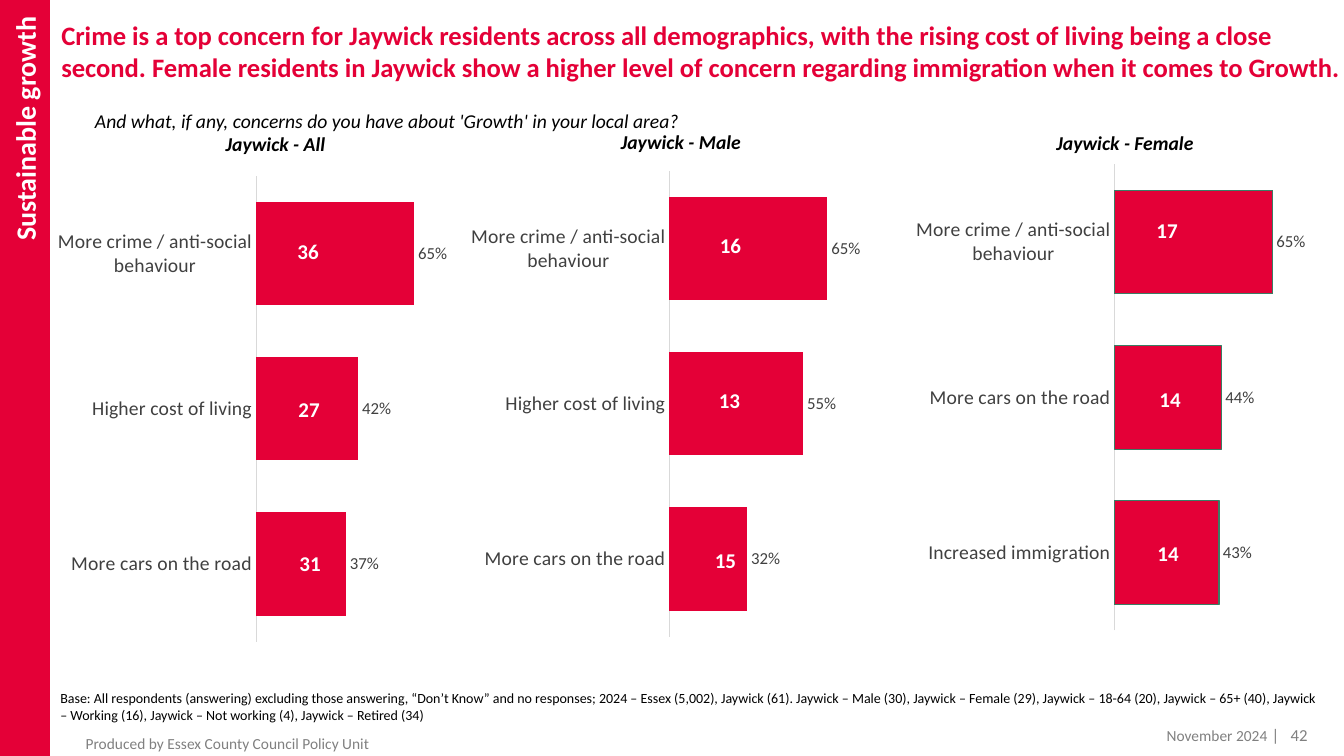
from lxml import etree
from pptx import Presentation
from pptx.chart.data import CategoryChartData
from pptx.dml.color import RGBColor
from pptx.enum.chart import XL_CHART_TYPE as ChartType, XL_LABEL_POSITION as LabelPos, XL_TICK_MARK as Tick
from pptx.enum.shapes import MSO_SHAPE as Preset
from pptx.enum.text import MSO_ANCHOR as Anchor, PP_ALIGN as Align
from pptx.oxml.ns import qn
from pptx.util import Inches, Pt

# Content
HEADLINE = ("Crime is a top concern for Jaywick residents across all demographics, with the rising cost "
            "of living being a close second. Female residents in Jaywick show a higher level of concern "
            "regarding immigration when it comes to Growth.")
SECTION = "Sustainable growth "
QUESTION = " And what, if any, concerns do you have about 'Growth' in your local area?"
BASE = ("Base: All respondents (answering) excluding those answering, “Don’t Know” and no responses; "
        "2024 – Essex (5,002), Jaywick (61). Jaywick – Male (30), Jaywick – Female (29), "
        "Jaywick – 18-64 (20), Jaywick – 65+ (40), Jaywick – Working (16), "
        "Jaywick – Not working (4), Jaywick – Retired (34)")
PRODUCER = "Produced by Essex County Council Policy Unit"
DATE = "November 2024"
PAGE = "42"

CRIME, COST = "More crime / anti-social behaviour", "Higher cost of living"
CARS, IMMIGRATION = "More cars on the road", "Increased immigration"

# Each concern: label, share, number of respondents, place of that number
GROUPS = [
    dict(heading="Jaywick - All", heading_at=(2.14, 1.26, 1.37, 0.34),
         chart_at=(0.21, 1.48), plot_at=(0.547, 0.054), outline=None,
         concerns=[(CRIME, 0.65, "36", (2.95, 2.37)),
                   (COST, 0.42, "27", (2.96, 3.93)),
                   (CARS, 0.37, "31", (2.97, 5.46))]),
    dict(heading="Jaywick - Male", heading_at=(6.06, 1.24, 2.24, 0.34),
         chart_at=(4.31, 1.43), plot_at=(0.547, 0.054), outline=None,
         concerns=[(CRIME, 0.65, "16", (7.14, 2.31)),
                   (COST, 0.55, "13", (7.13, 3.84)),
                   (CARS, 0.32, "15", (7.09, 5.43))]),
    dict(heading="Jaywick - Female", heading_at=(10.38, 1.25, 2.24, 0.34),
         chart_at=(8.86, 1.62), plot_at=(0.515, 0.002), outline="3A7D64",
         concerns=[(CRIME, 0.65, "17", (11.47, 2.16)),
                   (CARS, 0.44, "14", (11.5, 3.83)),
                   (IMMIGRATION, 0.43, "14", (11.48, 5.36))]),
]

THEME = dict(font="Calibri", red="E40037", white="FFFFFF", black="000000", grey="808080",
             label="404040", axis="D9D9D9",
             headline=19, section=20, heading=14, count=15, share=12, note=10, footer=11, page=12)
CHART_SIZE = (4.26, 4.89)
PLOT_SIZE = (0.453, 0.946)
COUNT_SIZE = (0.33, 0.22)


def rgb(value):
    return RGBColor.from_string(value)


def style_font(font, size, color, bold=None, italic=None):
    font.name, font.size, font.bold, font.italic = THEME["font"], Pt(size), bold, italic
    font.color.rgb = rgb(color)


def write(text, at=None, holder=None, size=14, color=THEME["black"], bold=False, italic=False,
          align=Align.LEFT, anchor=Anchor.TOP, insets=(0.1, 0.05, 0.1, 0.05),
          before=0, after=0, indent=0):
    """Write one paragraph into a new text box, or into the given shape."""
    holder = holder or slide.shapes.add_textbox(*map(Inches, at))
    frame = holder.text_frame
    frame.word_wrap = True
    frame.vertical_anchor = anchor
    (frame.margin_left, frame.margin_top,
     frame.margin_right, frame.margin_bottom) = map(Inches, insets)
    paragraph = frame.paragraphs[0]
    paragraph.alignment = align
    paragraph.space_before, paragraph.space_after = Pt(before), Pt(after)
    if indent:
        paragraph._p.get_or_add_pPr().set("marL", str(Inches(indent)))
    run = paragraph.add_run()
    run.text = text
    style_font(run.font, size, color, bold, italic)
    return paragraph


def place_plot(chart, at):
    """Fix the inner plot area at fractions of the chart."""
    plot_area = chart._chartSpace.find(".//" + qn("c:plotArea"))
    for old in plot_area.findall(qn("c:layout")):
        plot_area.remove(old)
    layout = etree.Element(qn("c:layout"))
    manual = etree.SubElement(layout, qn("c:manualLayout"))
    settings = [("layoutTarget", "inner"), ("xMode", "edge"), ("yMode", "edge"),
                *zip("xywh", at + PLOT_SIZE)]
    for tag, value in settings:
        etree.SubElement(manual, qn("c:" + tag)).set("val", str(value))
    plot_area.insert(0, layout)


def add_concern_chart(group):
    data = CategoryChartData(number_format="0%")
    data.categories = [label for label, *_ in group["concerns"]]
    data.add_series("Series 1", [share for _, share, *_ in group["concerns"]])
    chart = slide.shapes.add_chart(ChartType.BAR_CLUSTERED,
                                   *map(Inches, group["chart_at"] + CHART_SIZE), data).chart
    chart.has_legend = chart.has_title = False
    style_font(chart.font, THEME["note"], THEME["black"])
    place_plot(chart, group["plot_at"])

    labels_axis, share_axis = chart.category_axis, chart.value_axis
    labels_axis.reverse_order = True
    labels_axis.major_tick_mark = labels_axis.minor_tick_mark = Tick.NONE
    labels_axis.format.line.color.rgb = rgb(THEME["axis"])
    labels_axis.format.line.width = Pt(0.75)
    style_font(labels_axis.tick_labels.font, THEME["heading"], THEME["label"])
    share_axis.minimum_scale, share_axis.maximum_scale = 0, 0.8
    share_axis.has_major_gridlines = False
    share_axis.visible = False

    bars = chart.plots[0]
    bars.gap_width = 50
    bars.vary_by_categories = False
    bars.has_data_labels = True
    shares = bars.data_labels
    shares.show_value = True
    shares.number_format, shares.number_format_is_linked = "0%", False
    shares.position = LabelPos.OUTSIDE_END
    style_font(shares.font, THEME["share"], THEME["label"])
    look = bars.series[0].format
    look.fill.solid()
    look.fill.fore_color.rgb = rgb(THEME["red"])
    if group["outline"]:
        look.line.color.rgb = rgb(group["outline"])
        look.line.width = Pt(0.75)


deck = Presentation()
deck.slide_width, deck.slide_height = Inches(13.33), Inches(7.5)
slide = deck.slides.add_slide(deck.slide_layouts[6])

# Section band
band = slide.shapes.add_shape(Preset.RECTANGLE, 0, 0, Inches(0.49), Inches(7.5))
band.shadow.inherit = False
band.fill.solid()
band.fill.fore_color.rgb = band.line.color.rgb = rgb(THEME["red"])
band.line.width = Pt(1)
write(SECTION, holder=band, size=THEME["section"], color=THEME["white"], bold=True,
      align=Align.RIGHT, anchor=Anchor.MIDDLE, insets=(0.1, 0.1, 0.1, 0.05))
band.text_frame._txBody.bodyPr.set("vert", "vert270")

# Headline and question
write(HEADLINE, (0.51, 0.14, 12.9, 1.31), size=THEME["headline"], color=THEME["red"], bold=True,
      insets=(0.1, 0.05, 0.1, 0))
write(QUESTION, (0.8, 1.03, 6.54, 0.34), size=THEME["heading"], italic=True)

# Charts with headings and respondent counts
for group in GROUPS:
    add_concern_chart(group)
    write(group["heading"], group["heading_at"], size=THEME["heading"], bold=True, italic=True, before=6)
    for _, _, count, place in group["concerns"]:
        write(count, place + COUNT_SIZE, size=THEME["count"], color=THEME["white"], bold=True,
              insets=(0, 0, 0, 0), after=11.3)

# Base note and footer
write(BASE, (0.5, 6.79, 12.71, 0.44), size=THEME["note"])
write(PRODUCER, (0.76, 7.3, 6.54, 0.15), size=THEME["footer"], color=THEME["grey"],
      anchor=Anchor.MIDDLE, insets=(0, 0.05, 0.1, 0.05), indent=0.09)
write(DATE, (10.27, 7.15, 2.4, 0.15), size=THEME["footer"], color=THEME["grey"], align=Align.RIGHT)
page_line = write("| ", (12.12, 7.21, 0.85, 0.15), size=THEME["page"], color=THEME["grey"],
                  align=Align.RIGHT, anchor=Anchor.MIDDLE, insets=(0.1, 0.05, 0, 0.05))
page_line.runs[0].font._element.set("spc", "270")  # wider gap after the bar
page_number = page_line.add_run()
page_number.text = PAGE
style_font(page_number.font, THEME["page"], THEME["grey"])

deck.save("out.pptx")
